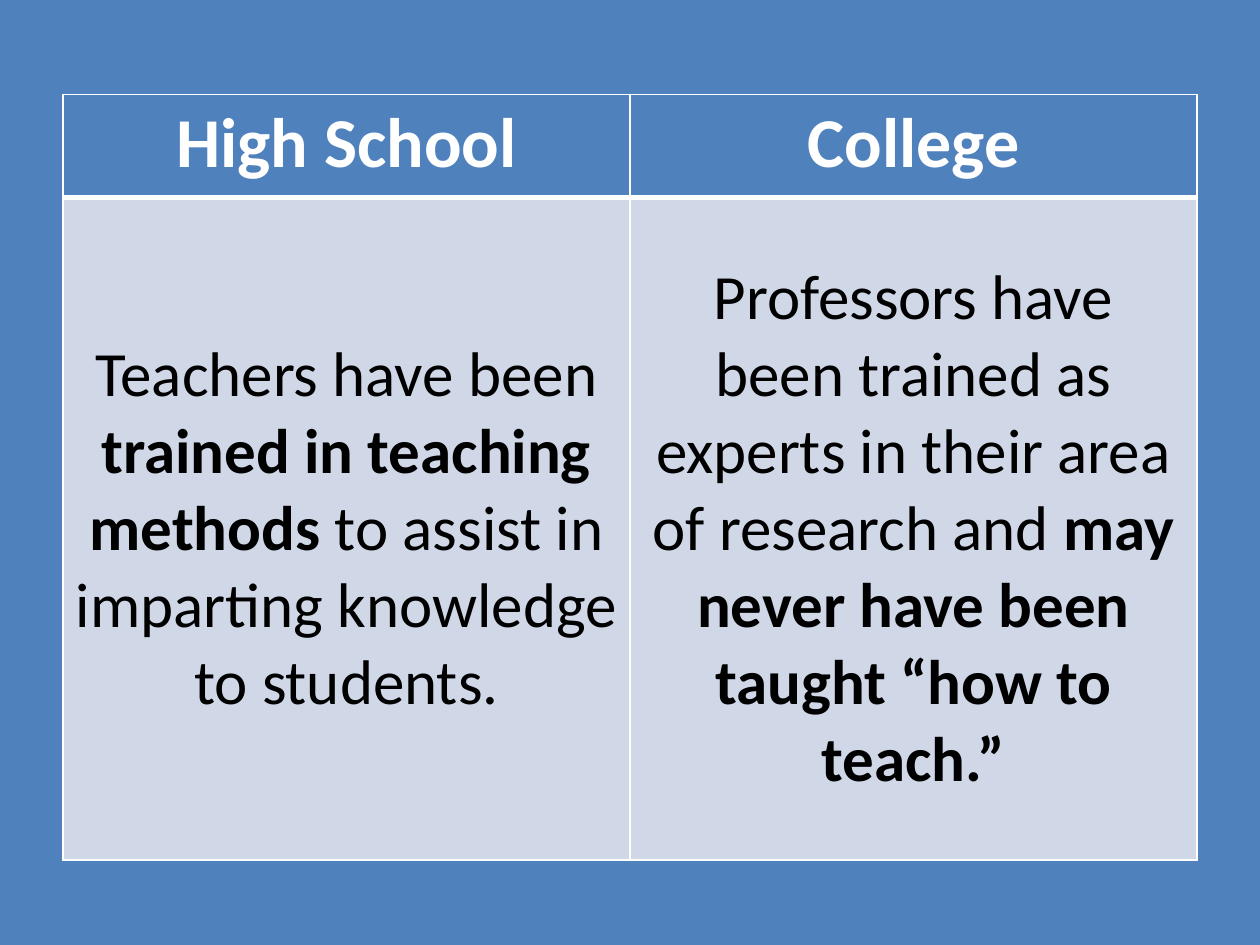
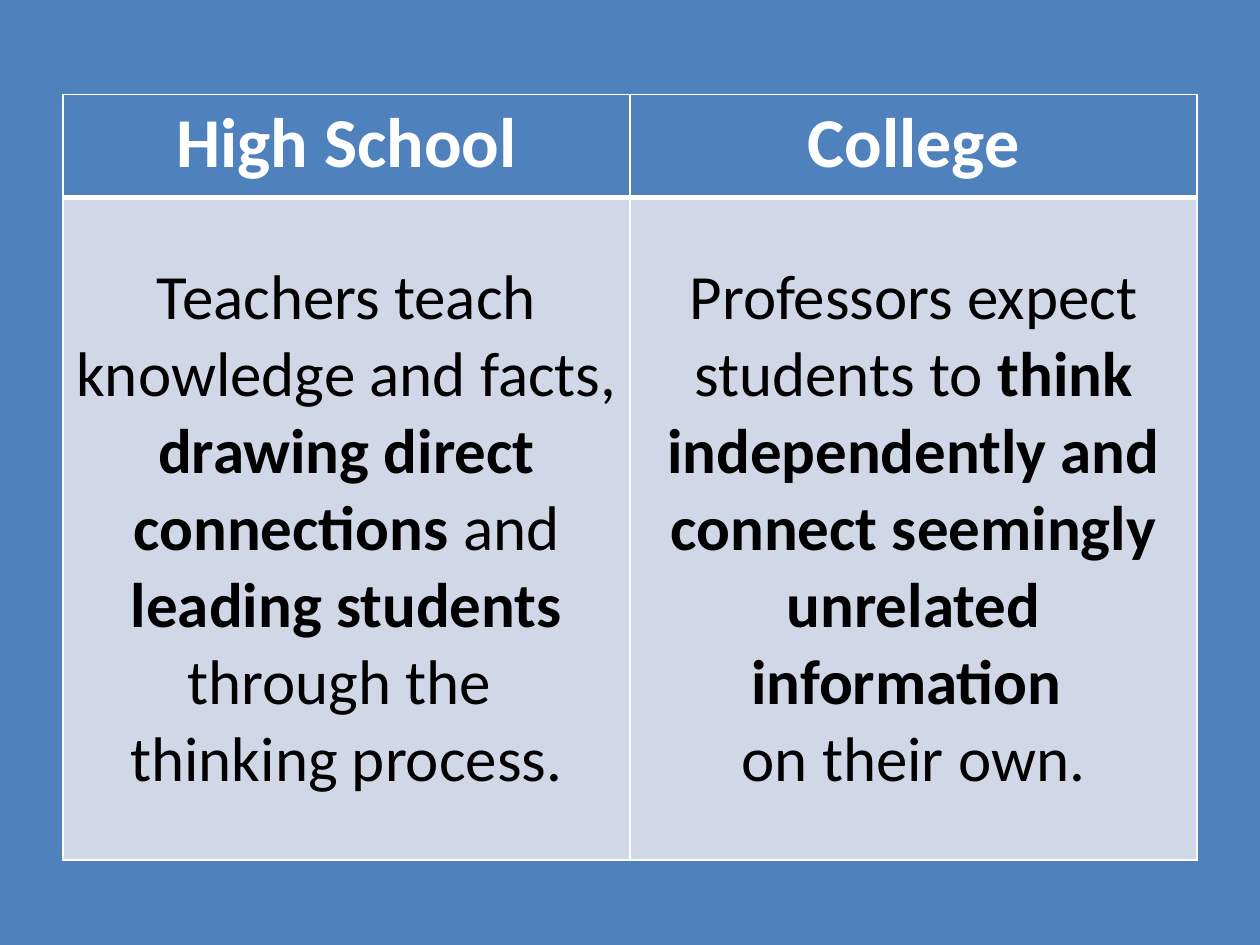
from lxml import etree
from pptx import Presentation
from pptx.dml.color import RGBColor
from pptx.enum.text import MSO_ANCHOR, PP_ALIGN
from pptx.oxml.ns import qn
from pptx.util import Cm, Pt

BLUE = RGBColor(0x4F, 0x81, 0xBD)
PALE = RGBColor(0xD0, 0xD8, 0xE8)
WHITE = RGBColor(0xFF, 0xFF, 0xFF)
BLACK = RGBColor(0, 0, 0)
CENTER = PP_ALIGN.CENTER
TOP = MSO_ANCHOR.TOP
MIDDLE = MSO_ANCHOR.MIDDLE
FONT = "Calibri"

HEADS = [[("High School", True)], [("College", True)]]
BODIES = [
    [
        [
            ("Teachers have been ", False),
            ("trained in teaching methods ", True),
            ("to assist in imparting knowledge to students.", False),
        ],
        [
            ("Professors have been trained as experts in their area of research and ", False),
            ("may never have been taught “how to teach.”", True),
        ],
    ],
    [
        [
            ("Teachers teach knowledge and facts, ", False),
            ("drawing direct connections ", True),
            ("and", False),
            (" leading students ", True),
            ("through the \n", False),
            ("thinking process.", False),
        ],
        [
            ("Professors expect students to ", False),
            ("think independently and connect seemingly unrelated information \n", True),
            ("on their own.", False),
        ],
    ],
]


def edge(cell, side, width):
    line = etree.SubElement(cell._tc.get_or_add_tcPr(), qn("a:ln" + side), w=str(Pt(width)))
    fill = etree.SubElement(line, qn("a:solidFill"))
    etree.SubElement(fill, qn("a:srgbClr"), val=str(WHITE))


def write(cell, parts, size, color):
    para = cell.text_frame.paragraphs[0]
    para.alignment = CENTER
    for text, bold in parts:
        run = para.add_run()
        run.text = text.rstrip("\n")
        run.font.name = FONT
        run.font.size = Pt(size)
        run.font.bold = bold
        run.font.color.rgb = color
        if text.endswith("\n"):
            para.add_line_break()


deck = Presentation()
deck.slide_width = Cm(25.4)
deck.slide_height = Cm(19.05)

for bodies in BODIES:
    slide = deck.slides.add_slide(deck.slide_layouts[6])
    back = slide.background.fill
    back.solid()
    back.fore_color.rgb = BLUE

    frame = slide.shapes.add_table(2, 2, Cm(1.27), Cm(1.9), Cm(22.86), Cm(15.44))
    table = frame.table
    rows = [
        (HEADS, 2.08, 40, WHITE, BLUE, TOP, (1, 3)),
        (bodies, 13.36, 36, BLACK, PALE, MIDDLE, (3, 1)),
    ]
    for r, (texts, height, size, color, shade, anchor, (upper, lower)) in enumerate(rows):
        table.rows[r].height = Cm(height)
        for c, parts in enumerate(texts):
            cell = table.cell(r, c)
            for side, width in zip("LRTB", (1, 1, upper, lower)):
                edge(cell, side, width)
            cell.fill.solid()
            cell.fill.fore_color.rgb = shade
            cell.vertical_anchor = anchor
            write(cell, parts, size, color)

deck.save("out.pptx")
